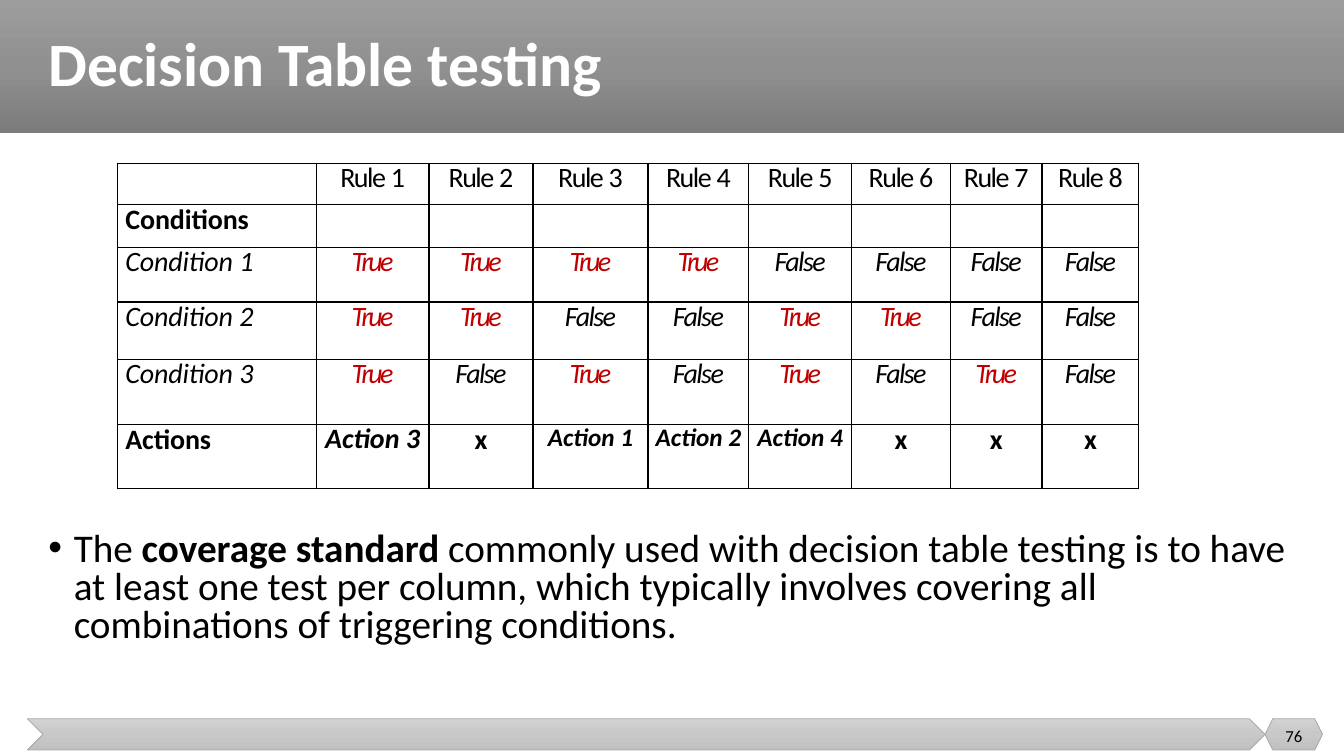
"""Builds the slide on decision table testing."""
from copy import deepcopy

from lxml import etree
from pptx import Presentation
from pptx.dml.color import RGBColor
from pptx.enum.shapes import MSO_SHAPE
from pptx.enum.text import MSO_ANCHOR, PP_ALIGN
from pptx.oxml.ns import qn
from pptx.util import Cm, Pt

RECTANGLE, CHEVRON, HEXAGON = MSO_SHAPE.RECTANGLE, MSO_SHAPE.CHEVRON, MSO_SHAPE.HEXAGON
LEFT, CENTER = PP_ALIGN.LEFT, PP_ALIGN.CENTER
TOP, MIDDLE = MSO_ANCHOR.TOP, MSO_ANCHOR.MIDDLE
BLACK = RGBColor(0x00, 0x00, 0x00)
WHITE = RGBColor(0xFF, 0xFF, 0xFF)
RED = RGBColor(0xC0, 0x00, 0x00)
BAR_LINE = RGBColor(0xA5, 0xA5, 0xA5)
HEADER_GREYS = [RGBColor(0x9D, 0x9D, 0x9D), RGBColor(0x90, 0x90, 0x90), RGBColor(0x7C, 0x7C, 0x7C)]
FOOTER_GREYS = [RGBColor(0xD2, 0xD2, 0xD2), RGBColor(0xC8, 0xC8, 0xC8), RGBColor(0xC0, 0xC0, 0xC0)]


def write(para, text, size=20, color=BLACK, bold=False, italic=False, spacing=0):
    """Add a formatted span to a paragraph; spacing is in points."""
    span = para.add_run()
    span.text = text
    span.font.name = "Calibri"
    span.font.size = Pt(size)
    span.font.color.rgb = color
    span.font.bold = bold
    span.font.italic = italic
    if spacing:
        span._r.get_or_add_rPr().set("spc", str(round(spacing * 100)))


def add_text_box(page, left, top, width, height, anchor):
    """Add a wrapping text box, in centimetres, and return its first paragraph."""
    box = page.shapes.add_textbox(Cm(left), Cm(top), Cm(width), Cm(height))
    box.text_frame.word_wrap = True
    box.text_frame.vertical_anchor = anchor
    return box.text_frame.paragraphs[0]


deck = Presentation()
deck.slide_width, deck.slide_height = Cm(33.87), Cm(19.05)
page = deck.slides.add_slide(deck.slide_layouts[6])

bars = [
    (RECTANGLE, 0, 0, 33.87, 3.35, HEADER_GREYS, None),
    (CHEVRON, 0.69, 18.11, 31.19, 0.79, FOOTER_GREYS, BAR_LINE),
    (HEXAGON, 31.88, 18.11, 1.45, 0.79, FOOTER_GREYS, BAR_LINE),
]
for kind, left, top, width, height, greys, outline in bars:
    bar = page.shapes.add_shape(kind, Cm(left), Cm(top), Cm(width), Cm(height))
    bar.shadow.inherit = False
    bar.fill.gradient()
    bar.fill.gradient_angle = 270
    stop_list = bar._element.spPr.find(qn("a:gradFill")).find(qn("a:gsLst"))
    stop_list.append(deepcopy(stop_list[-1]))
    for stop, grey, position in zip(bar.fill.gradient_stops, greys, (0, 0.5, 1)):
        stop.color.rgb = grey
        stop.position = position
    if outline is None:
        bar.line.fill.background()
    else:
        bar.line.color.rgb = outline
        bar.line.width = Pt(0.5)

title = add_text_box(page, 0.97, 0, 32.36, 3.35, MIDDLE)
title.line_spacing = 0.9
write(title, "Decision Table testing", size=44, color=WHITE, bold=True)

coverage = add_text_box(page, 0.97, 13.3, 32.36, 3.8, TOP)
coverage.line_spacing = 0.8
bullet_format = coverage._p.get_or_add_pPr()
bullet_format.set("marL", str(Cm(0.64)))
bullet_format.set("indent", str(Cm(-0.64)))
etree.SubElement(bullet_format, qn("a:buFont")).set("typeface", "Arial")
etree.SubElement(bullet_format, qn("a:buChar")).set("char", "•")
write(coverage, "The ", size=28)
write(coverage, "coverage standard ", size=28, bold=True)
write(coverage, "commonly used with decision table testing is to have at least one test per column, "
      "which typically involves covering all combinations of triggering conditions.", size=28)

number = add_text_box(page, 31.88, 18.03, 1.45, 1.02, MIDDLE)
number.alignment = CENTER
write(number, "76", size=12)

column_widths = [5, 2.84, 2.62, 2.9, 2.54, 2.59, 2.49, 2.31, 2.44]
row_heights = [1.04, 1.09, 1.37, 1.45, 1.63, 1.61]
rules = range(8)
rows = [
    [""] + [f"Rule {rule + 1}" for rule in rules],
    ["Conditions"] + [""] * len(rules),
]
for condition in range(3):
    answers = ["False" if rule >> (2 - condition) & 1 else "True" for rule in rules]
    rows.append([f"Condition {condition + 1}"] + answers)
rows.append(["Actions", "Action 3", "x", "Action 1", "Action 2", "Action 4", "x", "x", "x"])

frame = page.shapes.add_table(len(rows), len(column_widths), Cm(2.97), Cm(4.11),
                              Cm(sum(column_widths)), Cm(sum(row_heights)))
table = frame.table
table.first_row = False
table.horz_banding = False
for column, width in zip(table.columns, column_widths):
    column.width = Cm(width)
for row, height in zip(table.rows, row_heights):
    row.height = Cm(height)

for row_index, texts in enumerate(rows):
    for column_index, text in enumerate(texts):
        cell = table.cell(row_index, column_index)
        cell.margin_left = cell.margin_right = cell.margin_top = cell.margin_bottom = 0
        cell.fill.background()
        cell_format = cell._tc.get_or_add_tcPr()
        for place, side in enumerate(("lnL", "lnR", "lnT", "lnB")):
            border = etree.Element(qn(f"a:{side}"), w=str(Pt(1)))
            paint = etree.SubElement(border, qn("a:solidFill"))
            etree.SubElement(paint, qn("a:srgbClr")).set("val", str(BLACK))
            cell_format.insert(place, border)

        para = cell.text_frame.paragraphs[0]
        para.line_spacing = Pt(22.8)
        para.alignment = CENTER if column_index else LEFT
        if column_index == 0:
            cell.margin_left = Cm(0.19)
        if text.startswith("Rule"):
            write(para, "Rule ", spacing=-1.1)
            write(para, text[-1], spacing=-0.3)
        elif text in ("Conditions", "Actions"):
            para.line_spacing = Pt(23.4)
            write(para, text, bold=True, spacing=-0.1)
        elif text.startswith("Condition "):
            write(para, "Condition ", italic=True, spacing=-0.1)
            write(para, text[-1], italic=True)
        elif text == "True":
            write(para, text, color=RED, italic=True, spacing=-1.9)
        elif text == "False":
            write(para, text, italic=True, spacing=-1.2)
        elif text == "x":
            para.line_spacing = Pt(23.6)
            write(para, text, bold=True)
        elif text == "Action 3":
            write(para, text, bold=True, italic=True)
        elif text:
            para.line_spacing = Pt(20.5)
            write(para, text, size=18, bold=True, italic=True)

deck.save("out.pptx")
